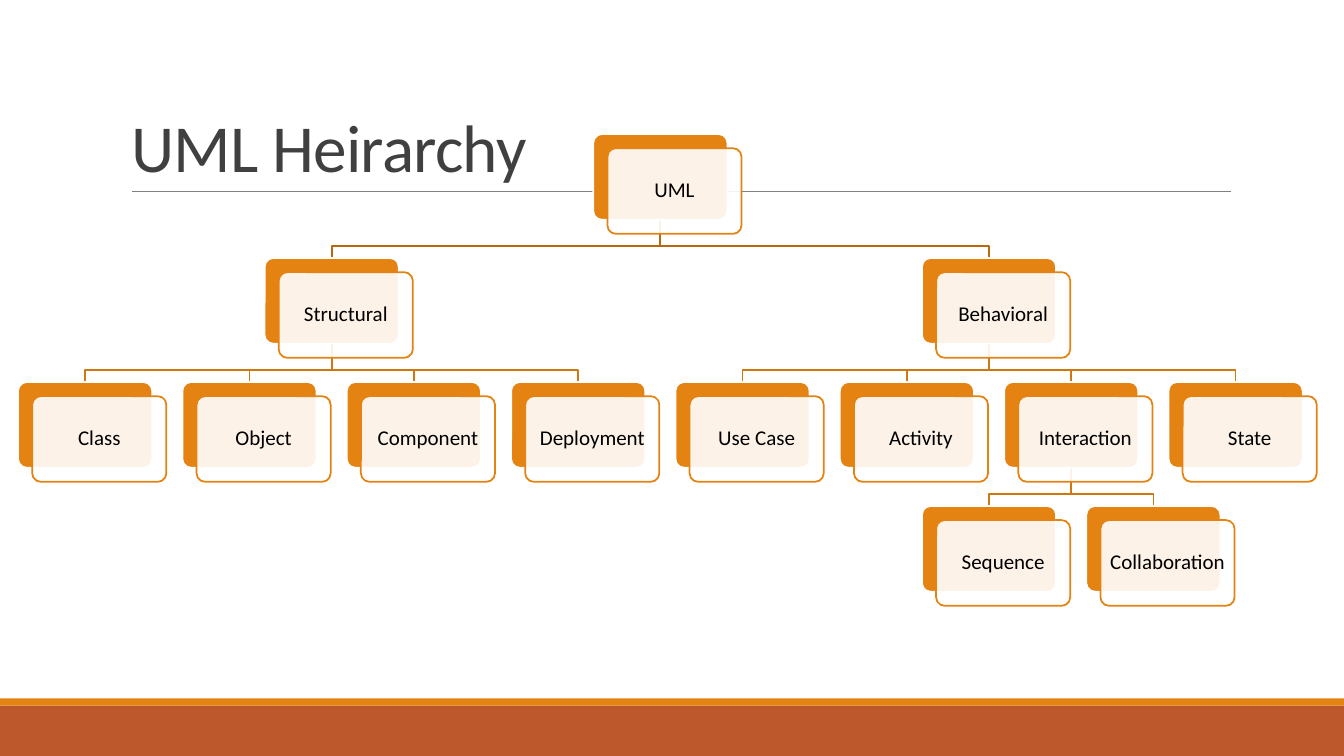
from lxml import etree
from pptx import Presentation
from pptx.dml.color import RGBColor
from pptx.enum.shapes import MSO_CONNECTOR, MSO_SHAPE
from pptx.enum.text import MSO_ANCHOR, MSO_AUTO_SIZE, PP_ALIGN
from pptx.oxml.ns import qn
from pptx.util import Inches, Pt

RECT = MSO_SHAPE.RECTANGLE
ROUND = MSO_SHAPE.ROUNDED_RECTANGLE
STRAIGHT = MSO_CONNECTOR.STRAIGHT
MIDDLE, BOTTOM = MSO_ANCHOR.MIDDLE, MSO_ANCHOR.BOTTOM
LEFT, CENTER = PP_ALIGN.LEFT, PP_ALIGN.CENTER
NO_FIT = MSO_AUTO_SIZE.NONE

COLORS = {
    "orange": "E48312",
    "rust": "BD582C",
    "trunk": "B7690E",
    "branch": "CF7710",
    "rule": "808080",
    "title": "404040",
    "text": "000000",
    "white": "FFFFFF",
}
FONT = "Calibri"

CARD_W, CARD_H = 1.33, 0.85
LEFT_X, TOP_Y = 0.18, 1.33
STEP_X, STEP_Y = 1.63, 1.23
SHIFT = 0.14
DROP = 0.26

TREE = ("UML", 3.5, [
    ("Structural", 1.5, [
        ("Class", 0, []),
        ("Object", 1, []),
        ("Component", 2, []),
        ("Deployment", 3, []),
    ]),
    ("Behavioral", 5.5, [
        ("Use Case", 4, []),
        ("Activity", 5, []),
        ("Interaction", 6, [
            ("Sequence", 5.5, []),
            ("Collaboration", 6.5, []),
        ]),
        ("State", 7, []),
    ]),
])


def color(name):
    return RGBColor.from_string(COLORS[name])


def set_line(line, name, width):
    line.color.rgb = color(name)
    line.width = Pt(width)


def set_font(par, size, name):
    par.font.name = FONT
    par.font.size = Pt(size)
    par.font.color.rgb = color(name)


def add_box(slide, kind, x, y, w, h, fill):
    box = slide.shapes.add_shape(kind, Inches(x), Inches(y), Inches(w), Inches(h))
    box.shadow.inherit = False
    box.fill.solid()
    box.fill.fore_color.rgb = color(fill)
    return box


def add_bar(slide, y, h, fill):
    bar = add_box(slide, RECT, 0, y, 13.33, h, fill)
    bar.line.fill.background()


def add_rule(slide, x, y, end):
    rule = slide.shapes.add_connector(
        STRAIGHT, Inches(x), Inches(y), Inches(end), Inches(y))
    set_line(rule.line, "rule", 0.5)
    etree.SubElement(rule._element.spPr, qn("a:effectLst"))


def set_title(slide, text):
    title = slide.shapes.title
    title.left, title.top = Inches(1.2), Inches(0.31)
    title.width, title.height = Inches(11), Inches(1.59)
    frame = title.text_frame
    frame.text = text
    frame.auto_size = NO_FIT
    frame.vertical_anchor = BOTTOM
    par = frame.paragraphs[0]
    par.alignment = LEFT
    par.line_spacing = 0.85
    set_font(par, 48, "title")
    par.runs[0].font._element.set("spc", "-50")


def add_card(slide, x, y, fill, edge):
    card = add_box(slide, ROUND, x, y, CARD_W, CARD_H, fill)
    card.adjustments[0] = 0.1
    set_line(card.line, edge, 1.25)
    return card


def add_node(slide, text, x, y):
    add_card(slide, x, y, "orange", "white")
    front = add_card(slide, x + SHIFT, y + SHIFT, "white", "orange")
    tint = front.fill._xPr.find(qn("a:solidFill"))[0]
    etree.SubElement(tint, qn("a:alpha"), val="90000")
    frame = front.text_frame
    frame.word_wrap = True
    frame.vertical_anchor = MIDDLE
    frame.margin_left = frame.margin_right = Inches(0.03)
    frame.margin_top = frame.margin_bottom = Inches(0.06)
    frame.text = text
    par = frame.paragraphs[0]
    par.alignment = CENTER
    par.line_spacing = 0.9
    set_font(par, 15, "text")


def add_link(slide, x, y, kid_x, kid_y, name):
    start, end = x + CARD_W / 2, kid_x + CARD_W / 2
    base = y + CARD_H
    turn = base + DROP
    path = slide.shapes.build_freeform(Inches(start), Inches(base))
    path.add_line_segments(
        [(Inches(start), Inches(turn)), (Inches(end), Inches(turn)),
         (Inches(end), Inches(kid_y))], close=False)
    link = path.convert_to_shape()
    link.shadow.inherit = False
    link.fill.background()
    set_line(link.line, name, 1.25)


def spot(col, row):
    return LEFT_X + STEP_X * col, TOP_Y + STEP_Y * row


def add_links(slide, node, row=0):
    _, col, kids = node
    name = "branch" if row else "trunk"
    for kid in kids:
        add_links(slide, kid, row + 1)
        add_link(slide, *spot(col, row), *spot(kid[1], row + 1), name)


def add_nodes(slide, node, row=0):
    text, col, kids = node
    add_node(slide, text, *spot(col, row))
    for kid in kids:
        add_nodes(slide, kid, row + 1)


def main():
    deck = Presentation()
    deck.slide_width, deck.slide_height = Inches(13.33), Inches(7.5)
    slide = deck.slides.add_slide(deck.slide_layouts[5])
    add_bar(slide, 7, 0.5, "rust")
    add_bar(slide, 6.93, 0.07, "orange")
    add_rule(slide, 1.31, 1.9, 12.21)
    set_title(slide, "UML Heirarchy")
    add_links(slide, TREE)
    add_nodes(slide, TREE)
    deck.save("out.pptx")


if __name__ == "__main__":
    main()
